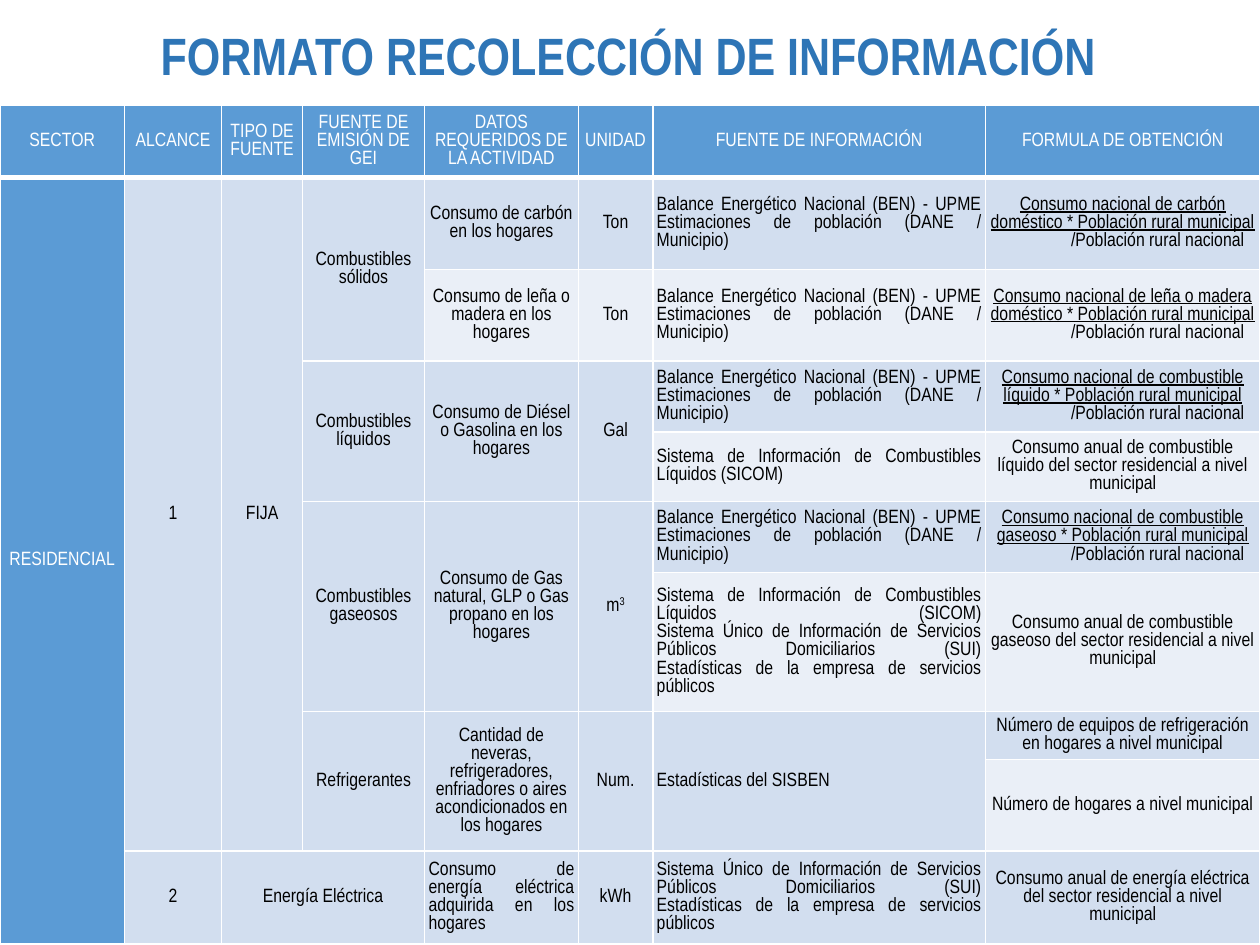
from typing import NamedTuple

import lxml.etree
import pptx
import pptx.dml.color
import pptx.enum.text
import pptx.oxml.ns
import pptx.util

Cm = pptx.util.Cm
Pt = pptx.util.Pt
ALIGN = pptx.enum.text.PP_ALIGN
MIDDLE = pptx.enum.text.MSO_ANCHOR.MIDDLE

FONT = "Arial Narrow"
COLORS = {
    "title": "2E75B6",
    "header": "5B9BD5",
    "odd": "D2DEEF",
    "even": "EAEFF7",
    "white": "FFFFFF",
    "black": "000000",
}
COLUMN_WIDTHS = [2.51, 1.96, 1.63, 2.46, 3.1, 1.5, 6.71, 5.53]
ROW_HEIGHTS = [1.45, 1.85, 1.85, 1.43, 1.4, 1.43, 2.8, 0.97, 1.85, 1.87]
HEADINGS = [
    "SECTOR", "ALCANCE", "TIPO DE FUENTE", "FUENTE DE EMISIÓN DE GEI",
    "DATOS REQUERIDOS DE LA ACTIVIDAD", "UNIDAD", "FUENTE DE INFORMACIÓN",
    "FORMULA DE OBTENCIÓN",
]
INFORMATION_COLUMN = 6
BALANCE = "Balance Energético Nacional (BEN) - UPME\vEstimaciones de población (DANE / Municipio)"
FUELS = "Sistema de Información de Combustibles Líquidos (SICOM)"
SERVICES = (
    "Sistema Único de Información de Servicios Públicos Domiciliarios (SUI)"
    "\vEstadísticas de la empresa de servicios públicos"
)


class Entry(NamedTuple):
    row: int
    column: int
    text: str
    rows: int = 1
    columns: int = 1
    align: ALIGN = ALIGN.CENTER
    superscript: str = ""
    divisor: str = ""


def ratio(row: int, fuel: str) -> Entry:
    numerator = f"Consumo nacional de {fuel} * Población rural municipal"
    return Entry(row, 7, numerator, divisor="/Población rural nacional")


def source(row: int, text: str, rows: int = 1) -> Entry:
    return Entry(row, INFORMATION_COLUMN, text, rows, align=ALIGN.JUSTIFY)


ENTRIES = [Entry(0, column, heading) for column, heading in enumerate(HEADINGS)] + [
    Entry(1, 0, "RESIDENCIAL", 9),
    Entry(1, 1, "1", 8),
    Entry(1, 2, "FIJA", 8),
    Entry(1, 3, "Combustibles sólidos", 2),
    Entry(1, 4, "Consumo de carbón en los hogares"),
    Entry(1, 5, "Ton"),
    source(1, BALANCE),
    ratio(1, "carbón doméstico"),
    Entry(2, 4, "Consumo de leña o madera en los hogares"),
    Entry(2, 5, "Ton"),
    source(2, BALANCE),
    ratio(2, "leña o madera doméstico"),
    Entry(3, 3, "Combustibles líquidos", 2),
    Entry(3, 4, "Consumo de Diésel o Gasolina en los hogares", 2),
    Entry(3, 5, "Gal", 2),
    source(3, BALANCE),
    ratio(3, "combustible líquido"),
    source(4, FUELS),
    Entry(4, 7, "Consumo anual de combustible líquido del sector residencial a nivel municipal"),
    Entry(5, 3, "Combustibles gaseosos", 2),
    Entry(5, 4, "Consumo de Gas natural, GLP o Gas propano en los hogares", 2),
    Entry(5, 5, "m", 2, superscript="3"),
    source(5, BALANCE),
    ratio(5, "combustible gaseoso"),
    source(6, f"{FUELS}\v{SERVICES}"),
    Entry(6, 7, "Consumo anual de combustible gaseoso del sector residencial a nivel municipal"),
    Entry(7, 3, "Refrigerantes", 2),
    Entry(7, 4, "Cantidad de neveras, refrigeradores, enfriadores o aires "
                "acondicionados en los hogares", 2),
    Entry(7, 5, "Num.", 2),
    source(7, "Estadísticas del SISBEN", 2),
    Entry(7, 7, "Número de equipos de refrigeración en hogares a nivel municipal"),
    Entry(8, 7, "Número de hogares a nivel municipal"),
    Entry(9, 1, "2"),
    Entry(9, 2, "Energía Eléctrica", columns=2),
    Entry(9, 4, "Consumo de energía eléctrica adquirida en los hogares", align=ALIGN.JUSTIFY),
    Entry(9, 5, "kWh"),
    source(9, SERVICES),
    Entry(9, 7, "Consumo anual de energía eléctrica del sector residencial a nivel municipal"),
]


def rgb(name: str) -> pptx.dml.color.RGBColor:
    return pptx.dml.color.RGBColor.from_string(COLORS[name])


def style_span(span, size: float, color: str, bold: bool = False) -> None:
    span.font.name = FONT
    span.font.size = Pt(size)
    span.font.bold = bold
    span.font.color.rgb = rgb(color)


def add_title(page) -> None:
    box = page.shapes.add_textbox(Cm(2.74), Cm(0.48), Cm(19.86), Cm(1.09))
    box.text_frame.word_wrap = True
    box.text_frame.text = "FORMATO RECOLECCIÓN DE INFORMACIÓN"
    para = box.text_frame.paragraphs[0]
    para.alignment = ALIGN.CENTER
    para.line_spacing = 0.9
    style_span(para.runs[0], 30, "title", bold=True)


def prepare_cell(cell, bottom_width: float) -> None:
    cell.margin_left = cell.margin_right = Cm(0.08)
    cell.margin_top = cell.margin_bottom = 0
    cell.vertical_anchor = MIDDLE
    properties = cell._tc.get_or_add_tcPr()
    qn = pptx.oxml.ns.qn
    for side, width in {"L": 1, "R": 1, "T": 1, "B": bottom_width}.items():
        line = lxml.etree.SubElement(properties, qn(f"a:ln{side}"), w=str(Pt(width)))
        fill = lxml.etree.SubElement(line, qn("a:solidFill"))
        lxml.etree.SubElement(fill, qn("a:srgbClr"), val=COLORS["white"])


def fill_cell(table, entry: Entry) -> None:
    cell = table.cell(entry.row, entry.column)
    if entry.rows > 1 or entry.columns > 1:
        cell.merge(table.cell(entry.row + entry.rows - 1, entry.column + entry.columns - 1))
    is_header = entry.row == 0 or entry.column == 0
    cell.fill.solid()
    cell.fill.fore_color.rgb = rgb("header" if is_header else "odd" if entry.row % 2 else "even")
    cell.text_frame.text = entry.text
    para = cell.text_frame.paragraphs[0]
    if entry.superscript:
        span = para.add_run()
        span.text = entry.superscript
        span.font._element.set("baseline", "30000")
    if entry.divisor:
        para.runs[0].font.underline = True
        divisor = cell.text_frame.add_paragraph()
        divisor.text = entry.divisor
        divisor._p.get_or_add_pPr().set("marL", str(Cm(1.41)))
    for para in cell.text_frame.paragraphs:
        para.alignment = entry.align
        for span in para.runs:
            style_span(span, 11, "white" if is_header else "black")


def add_form(page) -> None:
    frame = page.shapes.add_table(
        len(ROW_HEIGHTS), len(COLUMN_WIDTHS), 0, Cm(2.13),
        Cm(sum(COLUMN_WIDTHS)), Cm(sum(ROW_HEIGHTS)),
    )
    table = frame.table
    table.horz_banding = False
    for column, width in zip(table.columns, COLUMN_WIDTHS):
        column.width = Cm(width)
    for index, (row, height) in enumerate(zip(table.rows, ROW_HEIGHTS)):
        row.height = Cm(height)
        for cell in row.cells:
            prepare_cell(cell, 1 if index else 3)
    for entry in ENTRIES:
        fill_cell(table, entry)


def main() -> None:
    """Build the slide with the emissions data collection form."""
    deck = pptx.Presentation()
    deck.slide_width, deck.slide_height = Cm(25.4), Cm(19.05)
    page = deck.slides.add_slide(deck.slide_layouts[6])
    add_title(page)
    add_form(page)
    deck.save("out.pptx")


if __name__ == "__main__":
    main()
